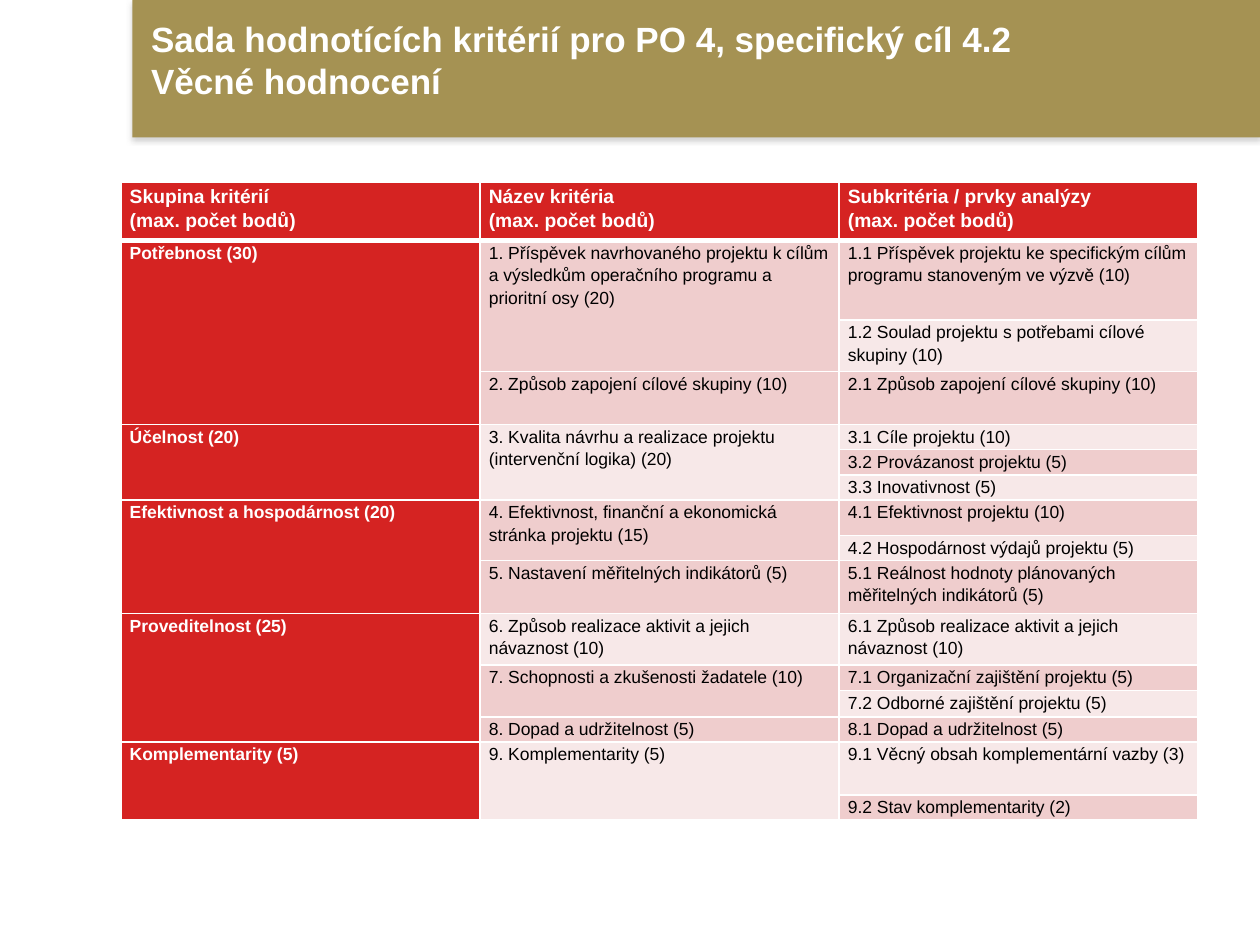
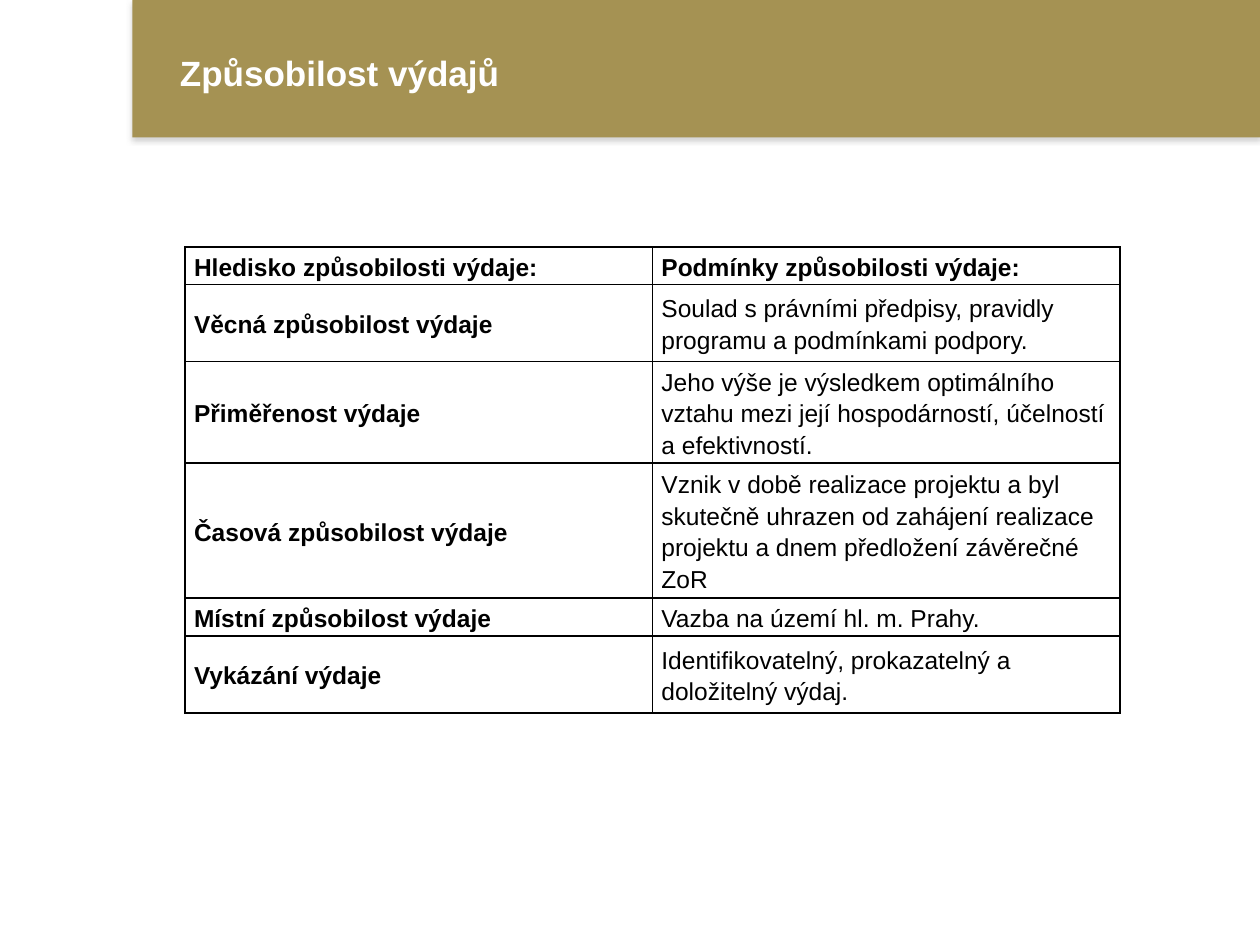
from lxml import etree
from pptx import Presentation
from pptx.dml.color import RGBColor
from pptx.enum.shapes import MSO_SHAPE
from pptx.enum.text import MSO_ANCHOR
from pptx.oxml import parse_xml
from pptx.oxml.ns import qn
from pptx.util import Inches, Pt

RECT = MSO_SHAPE.RECTANGLE
TOP, MIDDLE = MSO_ANCHOR.TOP, MSO_ANCHOR.MIDDLE
FONT = "Arial"
HUE = {"gold": "A59253", "red": "D52322", "rose": "EFCDCD", "pale": "F7E8E8",
       "white": "FFFFFF", "black": "000000", "shade": "808080"}

# Slide 1: groups hold criteria, criteria hold (subcriterion, row height)
SCORE_TITLE = "Sada hodnotících kritérií pro PO 4, specifický cíl 4.2\vVěcné hodnocení"
SCORE_HEAD = ["Skupina kritérií", "Název kritéria", "Subkritéria / prvky analýzy"]
SCORE_NOTE = "(max. počet bodů)"
HEAD_HIGH = 0.46
GROUPS = [
    ("Potřebnost (30)", [
        ("1. Příspěvek navrhovaného projektu k cílům a výsledkům operačního programu a prioritní osy (20)", [
            ("1.1 Příspěvek projektu ke specifickým cílům programu stanoveným ve výzvě (10)", 0.63),
            ("1.2 Soulad projektu s potřebami cílové skupiny (10)", 0.41)]),
        ("2. Způsob zapojení cílové skupiny (10)", [
            ("2.1 Způsob zapojení cílové skupiny (10)", 0.42)])]),
    ("Účelnost (20)", [
        ("3. Kvalita návrhu a realizace projektu (intervenční logika) (20)", [
            ("3.1 Cíle projektu (10)", 0.2),
            ("3.2 Provázanost projektu (5)", 0.2),
            ("3.3 Inovativnost (5)", 0.2)])]),
    ("Efektivnost a hospodárnost (20)", [
        ("4. Efektivnost, finanční a ekonomická stránka projektu (15)", [
            ("4.1 Efektivnost projektu (10)", 0.28),
            ("4.2 Hospodárnost výdajů projektu (5)", 0.2)]),
        ("5. Nastavení měřitelných indikátorů (5)", [
            ("5.1 Reálnost hodnoty plánovaných měřitelných indikátorů (5)", 0.42)])]),
    ("Proveditelnost (25)", [
        ("6. Způsob realizace aktivit a jejich návaznost (10)", [
            ("6.1 Způsob realizace aktivit a jejich návaznost (10)", 0.41)]),
        ("7. Schopnosti a zkušenosti žadatele (10)", [
            ("7.1 Organizační zajištění projektu (5)", 0.2),
            ("7.2 Odborné zajištění projektu (5)", 0.21)]),
        ("8. Dopad a udržitelnost (5)", [
            ("8.1 Dopad a udržitelnost (5)", 0.2)])]),
    ("Komplementarity (5)", [
        ("9. Komplementarity (5)", [
            ("9.1 Věcný obsah komplementární vazby (3)", 0.42),
            ("9.2 Stav komplementarity (2)", 0.2)])]),
]

# Slide 2: aspect, condition, row height
COST_TITLE = "Způsobilost výdajů"
COSTS = [
    ("Hledisko způsobilosti výdaje:", "Podmínky způsobilosti výdaje:", 0.3),
    ("Věcná způsobilost výdaje",
     "Soulad s právními předpisy, pravidly programu a podmínkami podpory.", 0.61),
    ("Přiměřenost výdaje",
     "Jeho výše je výsledkem optimálního vztahu mezi její hospodárností, účelností a efektivností.", 0.76),
    ("Časová způsobilost výdaje",
     "Vznik v době realizace projektu a byl skutečně uhrazen od zahájení realizace projektu "
     "a dnem předložení závěrečné ZoR", 1.0),
    ("Místní způsobilost výdaje", "Vazba na území hl. m. Prahy.", 0.3),
    ("Vykázání výdaje", "Identifikovatelný, prokazatelný a doložitelný výdaj.", 0.61),
]


def rgb(hue):
    return RGBColor.from_string(HUE[hue])


def style(part, size, hue, bold):
    for run in part.runs:
        font = run.font
        font.name, font.size, font.bold = FONT, Pt(size), bold
        font.color.rgb = rgb(hue)


def cast_shade(shape):
    shape.shadow.inherit = False
    glow = shape._element.spPr.find(qn("a:effectLst"))
    glow.append(parse_xml(
        '<a:outerShdw xmlns:a="http://schemas.openxmlformats.org/drawingml/2006/main" '
        f'blurRad="{Pt(3.1)}" dist="{Pt(1.8)}" dir="5400000" rotWithShape="0">'
        f'<a:srgbClr val="{HUE["shade"]}"><a:alpha val="35000"/></a:srgbClr></a:outerShdw>'))


def add_page(deck, title, box):
    """New slide with the gold band and its title."""
    page = deck.slides.add_slide(deck.slide_layouts[6])
    band = page.shapes.add_shape(RECT, Inches(1.05), 0, Inches(8.95), Inches(1.09))
    band.fill.solid()
    band.fill.fore_color.rgb = rgb("gold")
    band.line.fill.background()
    cast_shade(band)
    frame = page.shapes.add_textbox(*map(Inches, box)).text_frame
    frame.word_wrap = True
    frame.vertical_anchor = MIDDLE
    frame.paragraphs[0].text = title
    style(frame.paragraphs[0], 20, "white", True)
    return page


def add_grid(page, left, top, wide, cols, highs):
    shape = page.shapes.add_table(len(highs), cols, Inches(left), Inches(top),
                                  Inches(wide * cols), Inches(sum(highs)))
    grid = shape.table
    grid.first_row = grid.horz_banding = False
    for col in grid.columns:
        col.width = Inches(wide)
    for row, high in zip(grid.rows, highs):
        row.height = Inches(high)
    return grid


def dress(cell, fill, edge, top=1, base=1):
    """Borders, fill and margins of one cell."""
    props = cell._tc.get_or_add_tcPr()
    for side, width in (("L", 1), ("R", 1), ("T", top), ("B", base)):
        line = etree.SubElement(props, qn("a:ln" + side), w=str(Pt(width)))
        solid = etree.SubElement(line, qn("a:solidFill"))
        etree.SubElement(solid, qn("a:srgbClr"), val=HUE[edge])
    if fill:
        cell.fill.solid()
        cell.fill.fore_color.rgb = rgb(fill)
    else:
        cell.fill.background()
    cell.margin_left = cell.margin_right = Inches(0.07)
    cell.margin_top = cell.margin_bottom = 0


def write(cell, text, size, hue, bold, anchor):
    cell.text_frame.text = text
    cell.vertical_anchor = anchor
    for para in cell.text_frame.paragraphs:
        para.line_spacing = 1.15
        style(para, size, hue, bold)


def fill_span(grid, row, col, count, text):
    """Write a cell that covers count rows."""
    cell = grid.cell(row, col)
    if count > 1:
        cell.merge(grid.cell(row + count - 1, col))
    lead = col == 0
    write(cell, text, 10, "white" if lead else "black", lead, TOP)


def score_page(deck):
    page = add_page(deck, SCORE_TITLE, (1.1, -0.25, 8.62, 1.45))
    highs = [HEAD_HIGH] + [high for _, crits in GROUPS for _, subs in crits for _, high in subs]
    grid = add_grid(page, 0.96, 1.45, 2.85, 3, highs)
    for row in range(len(highs)):
        tint = "rose" if row % 2 else "pale"
        for col in range(3):
            fill = "red" if row == 0 or col == 0 else tint
            dress(grid.cell(row, col), fill, "white",
                  top=3 if row == 1 else 1, base=3 if row == 0 else 1)
    for col, head in enumerate(SCORE_HEAD):
        write(grid.cell(0, col), f"{head}\n{SCORE_NOTE}", 11, "white", True, TOP)
    row = 1
    for group, crits in GROUPS:
        fill_span(grid, row, 0, sum(len(subs) for _, subs in crits), group)
        for crit, subs in crits:
            fill_span(grid, row, 1, len(subs), crit)
            for sub, _ in subs:
                fill_span(grid, row, 2, 1, sub)
                row += 1


def cost_page(deck):
    page = add_page(deck, COST_TITLE, (1.33, 0.4, 8.17, 0.35))
    grid = add_grid(page, 1.47, 1.96, 3.71, 2, [high for *_, high in COSTS])
    for row, (*texts, _) in enumerate(COSTS):
        for col, text in enumerate(texts):
            cell = grid.cell(row, col)
            dress(cell, None, "black")
            write(cell, text, 14, "black", row == 0 or col == 0, MIDDLE)


def main():
    deck = Presentation()
    deck.slide_width, deck.slide_height = Inches(10), Inches(7.5)
    score_page(deck)
    cost_page(deck)
    deck.save("out.pptx")


if __name__ == "__main__":
    main()
